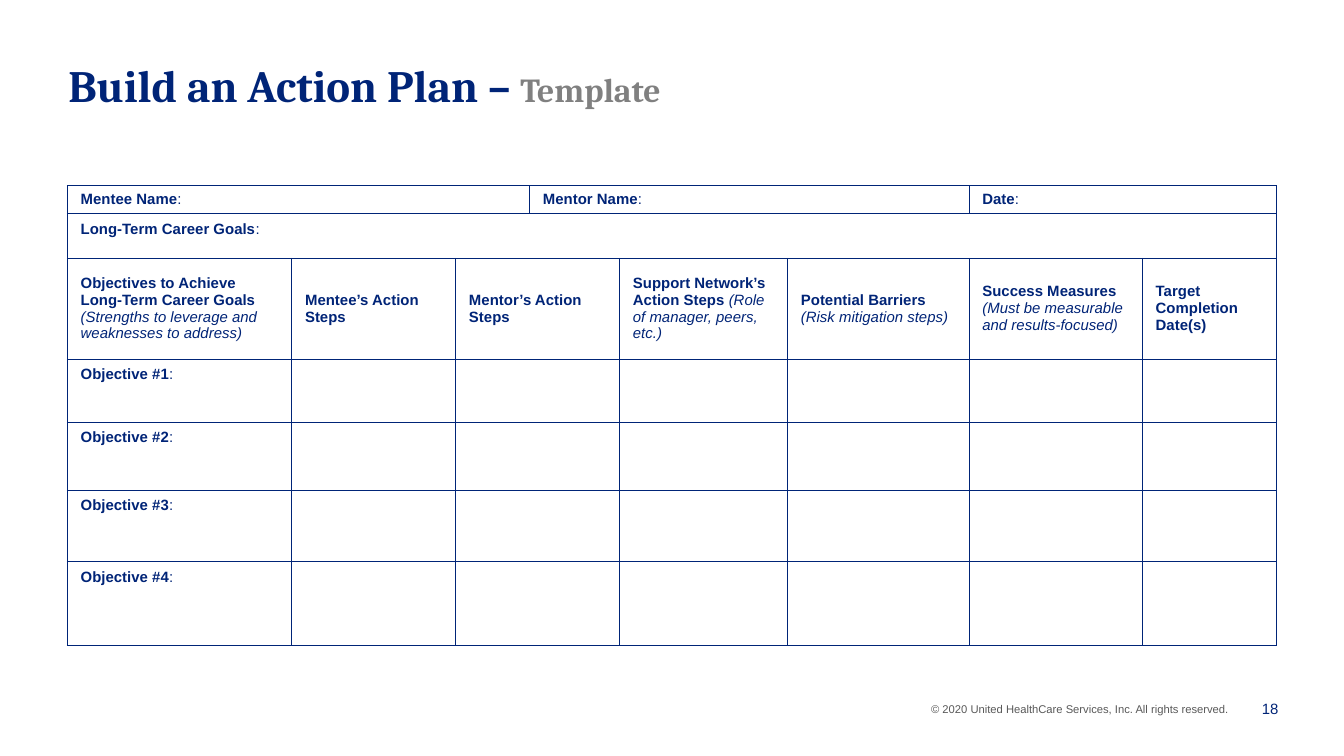
from pptx import Presentation
from pptx.dml.color import RGBColor
from pptx.enum.text import MSO_ANCHOR as ANCHOR, PP_ALIGN as ALIGN
from pptx.oxml import parse_xml
from pptx.oxml.ns import nsdecls
from pptx.util import Inches, Pt

NAVY = RGBColor(0x00, 0x24, 0x77)
GRAY = RGBColor(0x80, 0x80, 0x80)
DARK_GRAY = RGBColor(0x59, 0x59, 0x59)


def add_run(p, text, size=8, color=NAVY, font="Arial", bold=False, italic=False):
    r = p.add_run()
    r.text = text
    r.font.size = Pt(size)
    r.font.name = font
    r.font.color.rgb = color
    r.font.bold = bold
    r.font.italic = italic


def add_text_box(slide, left, top, width, height):
    """Add a wrapping text box and return its text frame."""
    box = slide.shapes.add_textbox(Inches(left), Inches(top), Inches(width), Inches(height))
    box.text_frame.word_wrap = True
    return box.text_frame


# Widescreen, 16:9
prs = Presentation()
prs.slide_width = Inches(10)
prs.slide_height = Inches(10 * 9 / 16)
s = prs.slides.add_slide(prs.slide_layouts[6])

# Title
p = add_text_box(s, 0.41, 0.38, 7.94, 0.6).paragraphs[0]
add_run(p, "Build an Action Plan – ", 24, font="Cambria", bold=True)
add_run(p, "Template", 18, GRAY, "Cambria", bold=True)

# Action plan table
col_widths = [1.67, 1.22, 0.55, 0.67, 1.25, 1.35, 1.29, 1]
row_heights = [0.21, 0.33, 0.75, 0.47, 0.51, 0.53, 0.62]
n_rows, n_cols = len(row_heights), len(col_widths)
table = s.shapes.add_table(n_rows, n_cols, Inches(0.5), Inches(1.38),
                           Inches(sum(col_widths)), Inches(sum(row_heights))).table
table.first_row = False
table.horz_banding = False
for col, width in zip(table.columns, col_widths):
    col.width = Inches(width)
for row, height in zip(table.rows, row_heights):
    row.height = Inches(height)

for cell in table.iter_cells():
    tcPr = cell._tc.get_or_add_tcPr()
    for side in ("lnL", "lnR", "lnT", "lnB"):
        tcPr.append(parse_xml(
            f'<a:{side} {nsdecls("a")} w="{Pt(0.25)}"><a:solidFill>'
            f'<a:srgbClr val="{NAVY}"/></a:solidFill></a:{side}>'))
    cell.fill.background()

# Merged cells: row, first column, last column
merges = [(0, 0, 2), (0, 3, 5), (0, 6, 7), (1, 0, 7)]
merges += [(row, 2, 3) for row in range(2, n_rows)]
for row, first, last in merges:
    table.cell(row, first).merge(table.cell(row, last))

# Form labels: bold name followed by a regular colon
labels = {(0, 0): "Mentee Name", (0, 3): "Mentor Name", (0, 6): "Date",
          (1, 0): "Long-Term Career Goals"}
labels.update({(n + 2, 0): f"Objective #{n}" for n in range(1, 5)})
for (row, col), label in labels.items():
    p = table.cell(row, col).text_frame.paragraphs[0]
    add_run(p, label, bold=True)
    add_run(p, ":")

# Column headings: column, bold text, italic hint, hint on its own line
headings = [
    (0, "Objectives to Achieve Long-Term Career Goals",
     "(Strengths to leverage and weaknesses to address)", True),
    (1, "Mentee’s Action Steps", "", False),
    (2, "Mentor’s Action Steps", "", False),
    (4, "Support Network’s Action Steps ", "(Role of manager, peers, etc.)", False),
    (5, "Potential Barriers", "(Risk mitigation steps)", True),
    (6, "Success Measures", "(Must be measurable and results-focused)", True),
    (7, "Target Completion Date(s)", "", False),
]
for col, heading, hint, own_line in headings:
    tf = table.cell(2, col).text_frame
    p = tf.paragraphs[0]
    add_run(p, heading, bold=True)
    if hint:
        add_run(tf.add_paragraph() if own_line else p, hint, italic=True)

for row in (0, 2):
    for cell in table.rows[row].cells:
        cell.vertical_anchor = ANCHOR.MIDDLE
        cell.margin_top = cell.margin_bottom = 0

# Footer
p = add_text_box(s, 6.83, 5.18, 2.58, 0.2).paragraphs[0]
add_run(p, "© 2020 United HealthCare Services, Inc. All rights reserved.", 6, DARK_GRAY)

tf = add_text_box(s, 9.22, 5.12, 0.39, 0.31)
tf.vertical_anchor = ANCHOR.MIDDLE
p = tf.paragraphs[0]
p.alignment = ALIGN.RIGHT
add_run(p, "18")

prs.save("out.pptx")
